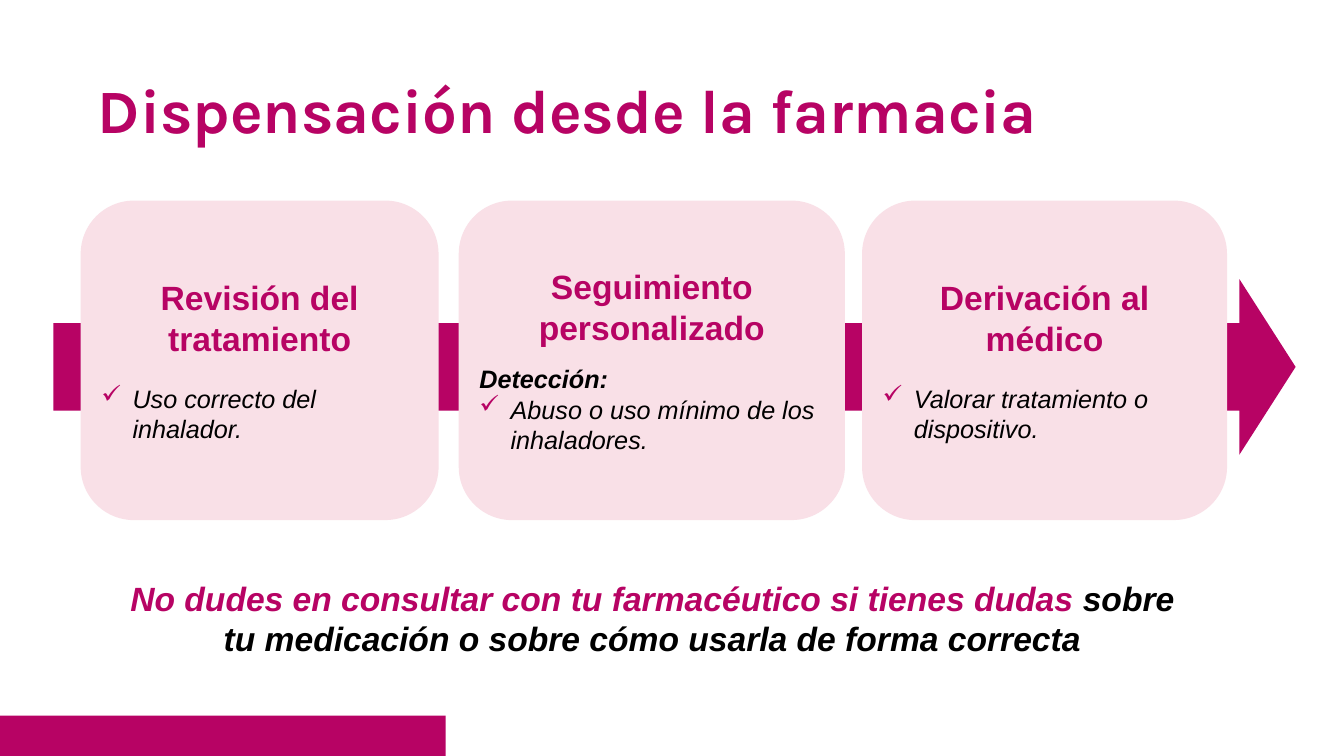
from lxml import etree
from pptx import Presentation
from pptx import util as u
from pptx.dml.color import RGBColor
from pptx.enum import shapes, text
from pptx.oxml.ns import qn

WIDTH, HEIGHT = 13.33, 7.5
MAGENTA, PINK, BLACK = "B70364", "F9E0E7", "000000"
CARD_TOP, CARD_HEIGHT = 1.99, 3.17
HEADING = {"size": u.Pt(24), "bold": True, "name": "Arial"}
DETAIL = {"size": u.Pt(18), "italic": True, "name": "Arial"}
CARDS = [
    (0.8, 3.55, 18, "Revisión del tratamiento", None, "Uso correcto del inhalador."),
    (4.55, 3.83, 12, "Seguimiento personalizado", "Detección:",
     "Abuso o uso mínimo de los inhaladores."),
    (8.55, 3.62, 18, "Derivación al médico", None, "Valorar tratamiento o dispositivo."),
]


def color(value):
    """Turn a hex string into a colour."""
    return RGBColor.from_string(value)


def set_all(target, values):
    """Set every attribute in a dict of format values."""
    for name, value in values.items():
        setattr(target, name, value)


def place(box, left, top, width, height):
    """Move and size a box, in inches."""
    set_all(box, {"left": u.Inches(left), "top": u.Inches(top),
                  "width": u.Inches(width), "height": u.Inches(height)})


def set_frame(box, anchor):
    """Wrap the text of a box with even margins."""
    margins = {f"margin_{side}": u.Inches(0.05) for side in ("left", "right", "top", "bottom")}
    set_all(box.text_frame, {"word_wrap": True, "vertical_anchor": anchor, **margins})
    return box.text_frame


def add_span(para, words, ink, font):
    """Add a run of formatted text."""
    span = para.add_run()
    span.text = words
    set_all(span.font, font)
    span.font.color.rgb = color(ink)


def add_check(para):
    """Give a paragraph a hanging check mark bullet."""
    props = para._p.get_or_add_pPr()
    indent = u.Inches(0.31)
    props.set("marL", str(indent))
    props.set("indent", str(-indent))
    tint = etree.SubElement(props, qn("a:buClr"))
    etree.SubElement(tint, qn("a:srgbClr"), val=MAGENTA)
    etree.SubElement(props, qn("a:buChar"), char="✓")


def add_block(page, kind, left, top, width, height, fill):
    """Add a flat filled shape without outline."""
    block = page.shapes.add_shape(kind, *map(u.Inches, (left, top, width, height)))
    block.shadow.inherit = False
    block.fill.solid()
    block.fill.fore_color.rgb = color(fill)
    block.line.fill.background()
    return block


def add_card(page, left, width, gap, heading, lead, detail):
    """Add a rounded card with a heading and a checked point."""
    card = add_block(page, shapes.MSO_SHAPE.ROUNDED_RECTANGLE,
                     left, CARD_TOP, width, CARD_HEIGHT, PINK)
    frame = set_frame(card, text.MSO_ANCHOR.MIDDLE)
    para = frame.paragraphs[0]
    set_all(para, {"alignment": text.PP_ALIGN.CENTER, "space_after": u.Pt(gap)})
    add_span(para, heading, MAGENTA, HEADING)
    if lead:
        para = frame.add_paragraph()
        para.alignment = text.PP_ALIGN.LEFT
        add_span(para, lead, BLACK, {**DETAIL, "bold": True})
    para = frame.add_paragraph()
    para.alignment = text.PP_ALIGN.LEFT
    add_check(para)
    add_span(para, detail, BLACK, DETAIL)


def add_title(page, words):
    """Fill and place the title placeholder."""
    title = page.shapes.title
    place(title, 0.92, 0.4, 11.5, 1.45)
    para = set_frame(title, text.MSO_ANCHOR.MIDDLE).paragraphs[0]
    set_all(para, {"alignment": text.PP_ALIGN.LEFT, "line_spacing": 0.9})
    add_span(para, words, MAGENTA, {"size": u.Pt(44), "bold": True, "name": "Karla"})


def add_closing(page, highlight, rest):
    """Add the centred closing advice in two colours."""
    box = page.shapes.add_textbox(*map(u.Inches, (1.05, 5.68, 10.84, 0.91)))
    para = set_frame(box, text.MSO_ANCHOR.TOP).paragraphs[0]
    para.alignment = text.PP_ALIGN.CENTER
    for words, ink in ((highlight, MAGENTA), (rest, BLACK)):
        add_span(para, words, ink, {**HEADING, "italic": True})


def main():
    """Build and save the pharmacy slide."""
    deck = Presentation()
    set_all(deck, {"slide_width": u.Inches(WIDTH), "slide_height": u.Inches(HEIGHT)})
    page = deck.slides.add_slide(deck.slide_layouts[5])
    add_block(page, shapes.MSO_SHAPE.RECTANGLE, 0, HEIGHT - 0.4, 4.42, 0.4, MAGENTA)
    arrow = add_block(page, shapes.MSO_SHAPE.RIGHT_ARROW, 0.53, 2.77, 12.32, 1.74, MAGENTA)
    arrow.adjustments[1] = 0.32
    add_title(page, "Dispensación desde la farmacia")
    for card in CARDS:
        add_card(page, *card)
    add_closing(page, "No dudes en consultar con tu farmacéutico si tienes dudas ",
                "sobre tu medicación o sobre cómo usarla de forma correcta")
    deck.save("out.pptx")


if __name__ == "__main__":
    main()
